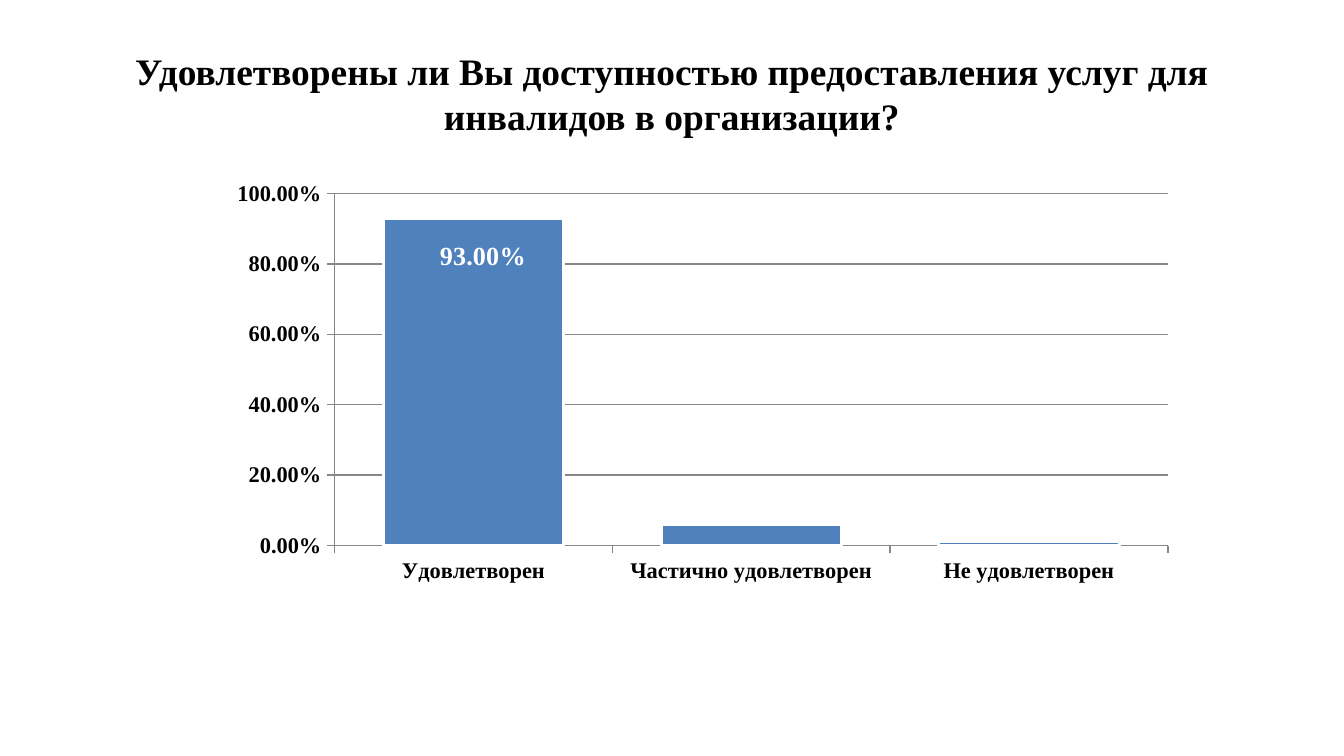
from lxml import etree
from pptx import Presentation
from pptx.chart.data import CategoryChartData
from pptx.dml.color import RGBColor
from pptx.enum.chart import XL_CHART_TYPE, XL_LABEL_POSITION, XL_TICK_MARK
from pptx.enum.text import MSO_ANCHOR, MSO_AUTO_SIZE, PP_ALIGN
from pptx.oxml.ns import qn
from pptx.util import Inches, Pt

COLUMNS = XL_CHART_TYPE.COLUMN_CLUSTERED
INSIDE_END = XL_LABEL_POSITION.INSIDE_END
OUTSIDE = XL_TICK_MARK.OUTSIDE
BLACK = RGBColor(0x00, 0x00, 0x00)
WHITE = RGBColor(0xFF, 0xFF, 0xFF)
BLUE = RGBColor(0x4F, 0x81, 0xBD)
GRAY = RGBColor(0x87, 0x87, 0x87)
FONT = "Times New Roman"

# Content
TITLE = ("Удовлетворены ли Вы доступностью предоставления услуг "
         "для инвалидов в организации?")
ANSWERS = [
    ("Удовлетворен", 0.93),
    ("Частично удовлетворен", 0.0589),
    ("Не удовлетворен", 0.0111),
]
PERCENT = "0.00%"

# Layout in inches: a 16:9 slide, the plot measured from the chart's corner
WIDTH = 10
HEIGHT = WIDTH * 9 / 16
TITLE_BOX = (0.5, 0.22, 9, 0.94)
CHART_BOX = (1.69, 1.32, 7.1, 3.35)
PLOT_BOX = (0.8, 0.12, 6.2, 2.62)
CHART_SIZE = CHART_BOX[2:] * 2
PLOT_AREA = {key: length / whole for key, length, whole
             in zip("xywh", PLOT_BOX, CHART_SIZE)}
LABEL_SHIFT = {"x": 0.01, "y": 0.04}


def style(font, size, color=BLACK):
    font.name, font.size, font.bold = FONT, Pt(size), True
    font.color.rgb = color


def write(shape, text, size, color=BLACK, align=PP_ALIGN.CENTER):
    tf = shape.text_frame
    tf.word_wrap = True
    tf.auto_size = MSO_AUTO_SIZE.NONE
    tf.vertical_anchor = MSO_ANCHOR.MIDDLE
    p = tf.paragraphs[0]
    p.alignment = align
    r = p.add_run()
    r.text = text
    style(r.font, size, color)


def set_layout(parent, index, shares, inner=False):
    """Place a chart part by hand, with shares of the chart's size."""
    for old in parent.findall(qn("c:layout")):
        parent.remove(old)
    layout = etree.Element(qn("c:layout"))
    manual = etree.SubElement(layout, qn("c:manualLayout"))
    settings = dict(shares)
    if inner:
        settings = {"layoutTarget": "inner", "xMode": "edge",
                    "yMode": "edge", **shares}
    for name, value in settings.items():
        etree.SubElement(manual, qn("c:" + name)).set("val", str(value))
    parent.insert(index, layout)


prs = Presentation()
prs.slide_width, prs.slide_height = Inches(WIDTH), Inches(HEIGHT)
s = prs.slides.add_slide(prs.slide_layouts[5])

# Title
title = s.shapes.title
title.left, title.top, title.width, title.height = map(Inches, TITLE_BOX)
write(title, TITLE, 20)

# Chart
data = CategoryChartData(number_format=PERCENT)
data.categories = [answer for answer, _ in ANSWERS]
data.add_series("Series 1", [share for _, share in ANSWERS])
chart = s.shapes.add_chart(COLUMNS, *map(Inches, CHART_BOX), data).chart
chart.has_legend = False
chart.has_title = False
chart.font.name, chart.font.size = "Calibri", Pt(10)
set_layout(chart.plots[0]._element.getparent(), 0, PLOT_AREA, inner=True)

# Axes
for axis in (chart.category_axis, chart.value_axis):
    axis.major_tick_mark = OUTSIDE
    axis.format.line.color.rgb = GRAY
    style(axis.tick_labels.font, 12)
value_axis = chart.value_axis
value_axis.minimum_scale, value_axis.maximum_scale = 0, 1
value_axis.major_unit = 0.2
value_axis.tick_labels.number_format = PERCENT
value_axis.tick_labels.number_format_is_linked = False
value_axis.major_gridlines.format.line.color.rgb = GRAY

# Columns
plot = chart.plots[0]
plot.gap_width = 54
plot.vary_by_categories = False
series = plot.series[0]
series.format.fill.solid()
series.format.fill.fore_color.rgb = BLUE
series.format.line.color.rgb = WHITE
series.format.line.width = Pt(1.5)

# Label on the tallest column only, without a leader line
labels = series.data_labels
labels.show_value = False
label = series.points[0].data_label
style(label.font, 14, WHITE)
label.position = INSIDE_END
set_layout(labels._element.find(qn("c:dLbl")), 1, LABEL_SHIFT)
for leader in labels._element.findall(qn("c:showLeaderLines")):
    leader.set("val", "0")

prs.save("out.pptx")
